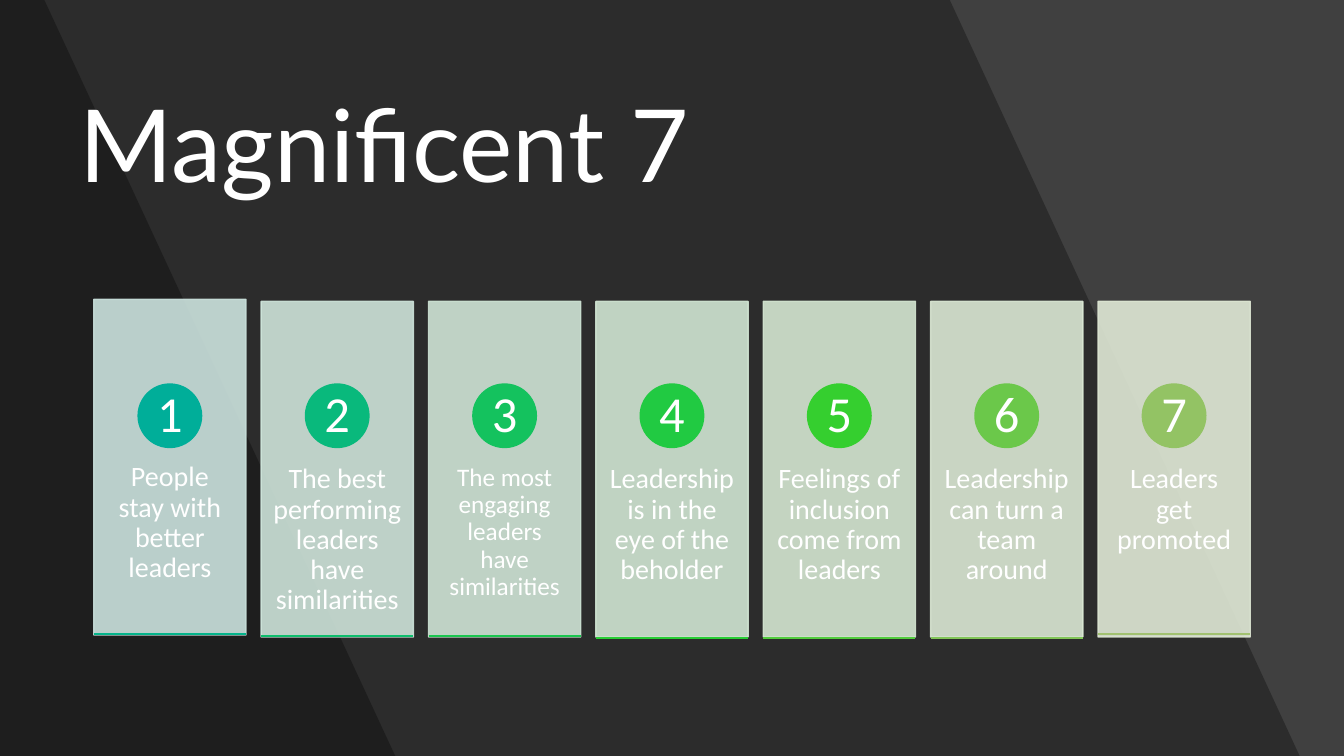
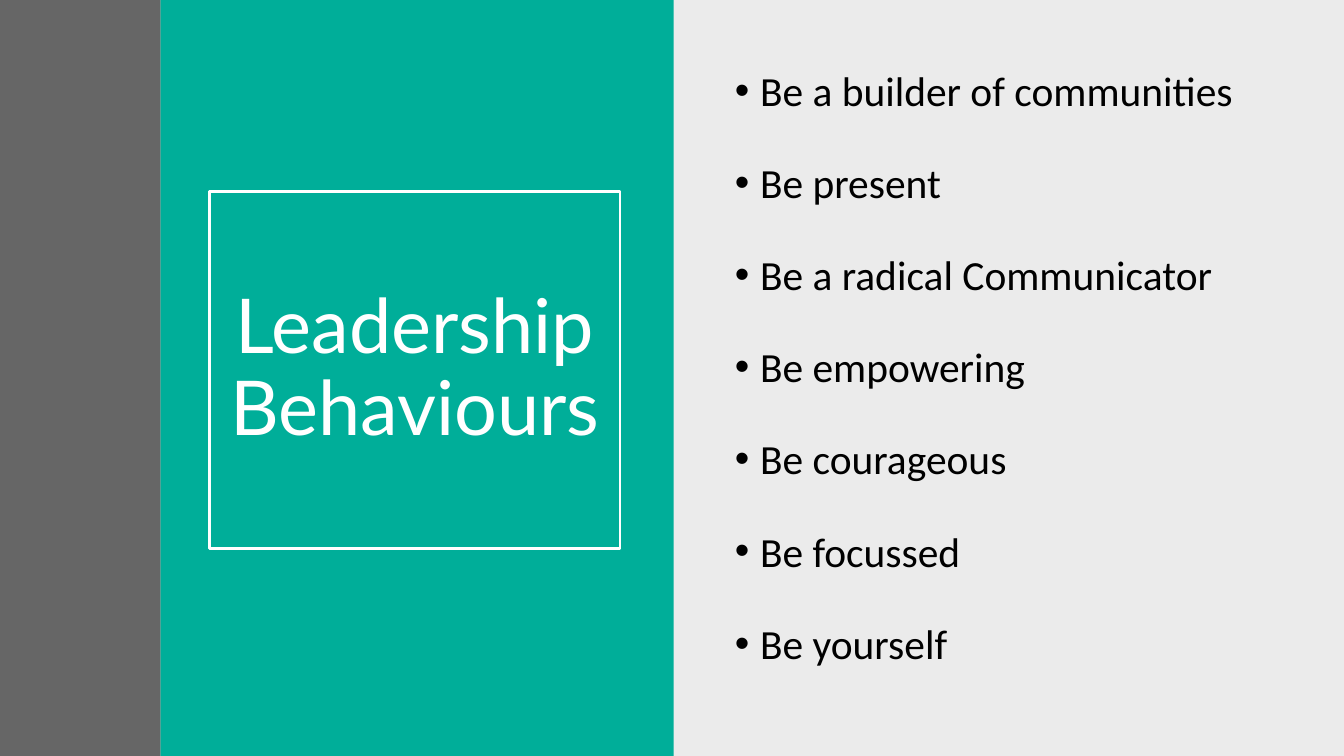
"""Build two leadership slides: seven numbered cards and a list of behaviours."""
from lxml import etree
from pptx import Presentation
from pptx import util as u
from pptx.dml.color import RGBColor
from pptx.enum import shapes, text
from pptx.oxml.ns import qn

HEX = {"white": "FFFFFF", "black": "000000", "slate": "404040", "teal": "00AE99"}
HEAD, BODY = "Lato", "Calibri"
RECT, OVAL = shapes.MSO_SHAPE.RECTANGLE, shapes.MSO_SHAPE.OVAL
MID, MIDDLE = text.PP_ALIGN.CENTER, text.MSO_ANCHOR.MIDDLE


def paint(shape, fill, line=None, alpha=100):
    shape.shadow.inherit = False
    shape.fill.solid()
    shape.fill.fore_color.rgb = RGBColor.from_string(fill)
    if line:
        shape.line.color.rgb = RGBColor.from_string(line)
        shape.line.width = u.Pt(1)
    else:
        shape.line.fill.background()
    if alpha < 100:
        for tint in shape._element.spPr.iter(qn("a:srgbClr")):
            etree.SubElement(tint, qn("a:alpha")).set("val", str(alpha * 1000))


def write(shape, words, size, font=BODY, color="white", align=None,
          anchor=MIDDLE, pad=(0.1, 0.05), space=0.9):
    frame = shape.text_frame
    frame.word_wrap = True
    frame.auto_size = text.MSO_AUTO_SIZE.NONE
    frame.vertical_anchor = anchor
    frame.margin_left = frame.margin_right = u.Inches(pad[0])
    frame.margin_top = frame.margin_bottom = u.Inches(pad[1])
    for n, line in enumerate(words):
        para = frame.add_paragraph() if n else frame.paragraphs[0]
        para.alignment = align
        para.line_spacing = space
        run = para.add_run()
        run.text = line
        run.font.size = u.Pt(size)
        run.font.name = font
        run.font.color.rgb = RGBColor.from_string(HEX[color])
    return frame


deck = Presentation()
deck.slide_width, deck.slide_height = u.Inches(13.33), u.Inches(7.5)
slides = []
for name, back, box, size, align in [
    ("Magnificent 7", "slate", (0.69, 0.76, 11.51, 1.45), 72, text.PP_ALIGN.LEFT),
    ("Leadership Behaviours", "white", (2.08, 1.9, 4.07, 3.54), 54, MID),
]:
    slide = deck.slides.add_slide(deck.slide_layouts[5])
    slide.background.fill.solid()
    slide.background.fill.fore_color.rgb = RGBColor.from_string(HEX[back])
    title = slide.shapes.title
    title.left, title.top, title.width, title.height = map(u.Inches, box)
    write(title, [name], size, HEAD, align=align)
    slides.append(slide)
first, second = slides

tree = first.shapes
for top, foot in [(9.42, 12.89), (0.44, 3.92)]:
    pen = tree.build_freeform(0, 0, scale=1.0)
    pen.add_line_segments([(u.Inches(x), u.Inches(y)) for x, y in
                           [(top, 0), (foot, 7.5), (0, 7.5)]], close=True)
    band = pen.convert_to_shape()
    paint(band, HEX["black"], alpha=30)
    tree.title._element.addprevious(band._element)

cards = [
    ("People stay with better leaders", 20, "CCE3DE", "00AE99", "04B48B", 2.97, 6.29),
    ("The best performing leaders have similarities", 20,
     "CEE4DA", "09B97C", "0EBE6D", 2.99, 6.31),
    ("The most engaging leaders have similarities", 18,
     "CFE5D6", "14C25E", "1AC64F", 2.99, 6.31),
    ("Leadership is in the eye of the beholder", 20,
     "D1E6D3", "21CA42", "28CD35", 2.99, 6.33),
    ("Feelings of inclusion come from leaders", 20,
     "D5E7D2", "35CF2F", "52CC3D", 2.99, 6.33),
    ("Leadership can turn a team around", 20,
     "DBE8D4", "6BC84A", "81C557", 2.99, 6.33),
    ("Leaders get promoted", 20, "E0E9D6", "93C364", "A1C170", 2.99, 6.29),
]
wide, tall, step, disc = 1.51, 3.33, 1.66, 0.63
for n, (words, size, pale, vivid, edge, top, base) in enumerate(cards):
    left = 0.93 + n * step
    card = tree.add_shape(RECT, u.Inches(left), u.Inches(top),
                          u.Inches(wide), u.Inches(tall))
    paint(card, pale, pale, 90)
    label = tree.add_textbox(u.Inches(left), u.Inches(top + 1.26),
                             u.Inches(wide), u.Inches(2))
    write(label, [words], size, align=MID, anchor=text.MSO_ANCHOR.TOP, pad=(0.12, 0.36))
    badge = tree.add_shape(OVAL, u.Inches(left + (wide - disc) / 2), u.Inches(3.81),
                           u.Inches(disc), u.Inches(disc))
    paint(badge, vivid, vivid)
    write(badge, [str(n + 1)], 36, align=MID, pad=(0, 0))
    rule = tree.add_connector(shapes.MSO_CONNECTOR.STRAIGHT, u.Inches(left),
                              u.Inches(base), u.Inches(left + wide), u.Inches(base))
    rule.line.color.rgb = RGBColor.from_string(edge)
    rule.line.width = u.Pt(1)
    etree.SubElement(rule._element.spPr, qn("a:effectLst"))

tree = second.shapes
title = tree.title
title.line.color.rgb = RGBColor.from_string(HEX["white"])
title.line.width = u.Pt(2)
for left, wide, color, alpha in [
    (6.67, 6.66, "black", 8), (1.59, 5.09, "teal", 100), (0, 1.59, "slate", 80),
]:
    panel = tree.add_shape(RECT, u.Inches(left), 0, u.Inches(wide), deck.slide_height)
    paint(panel, HEX[color], alpha=alpha)
    title._element.addprevious(panel._element)

habits = ["Be a builder of communities", "Be present", "Be a radical Communicator",
          "Be empowering", "Be courageous", "Be focussed", "Be yourself"]
body = tree.add_textbox(u.Inches(7.19), u.Inches(0.3), u.Inches(5.53), u.Inches(6.94))
frame = write(body, habits, 29.6, color="black", anchor=text.MSO_ANCHOR.TOP, space=1.6)
for para in frame.paragraphs:
    para.space_before = u.Pt(9)
    props = para._p.get_or_add_pPr()
    props.set("marL", str(u.Inches(0.25)))
    props.set("indent", str(-u.Inches(0.25)))
    etree.SubElement(props, qn("a:buFont")).set("typeface", "Arial")
    etree.SubElement(props, qn("a:buChar")).set("char", "•")

deck.save("out.pptx")
